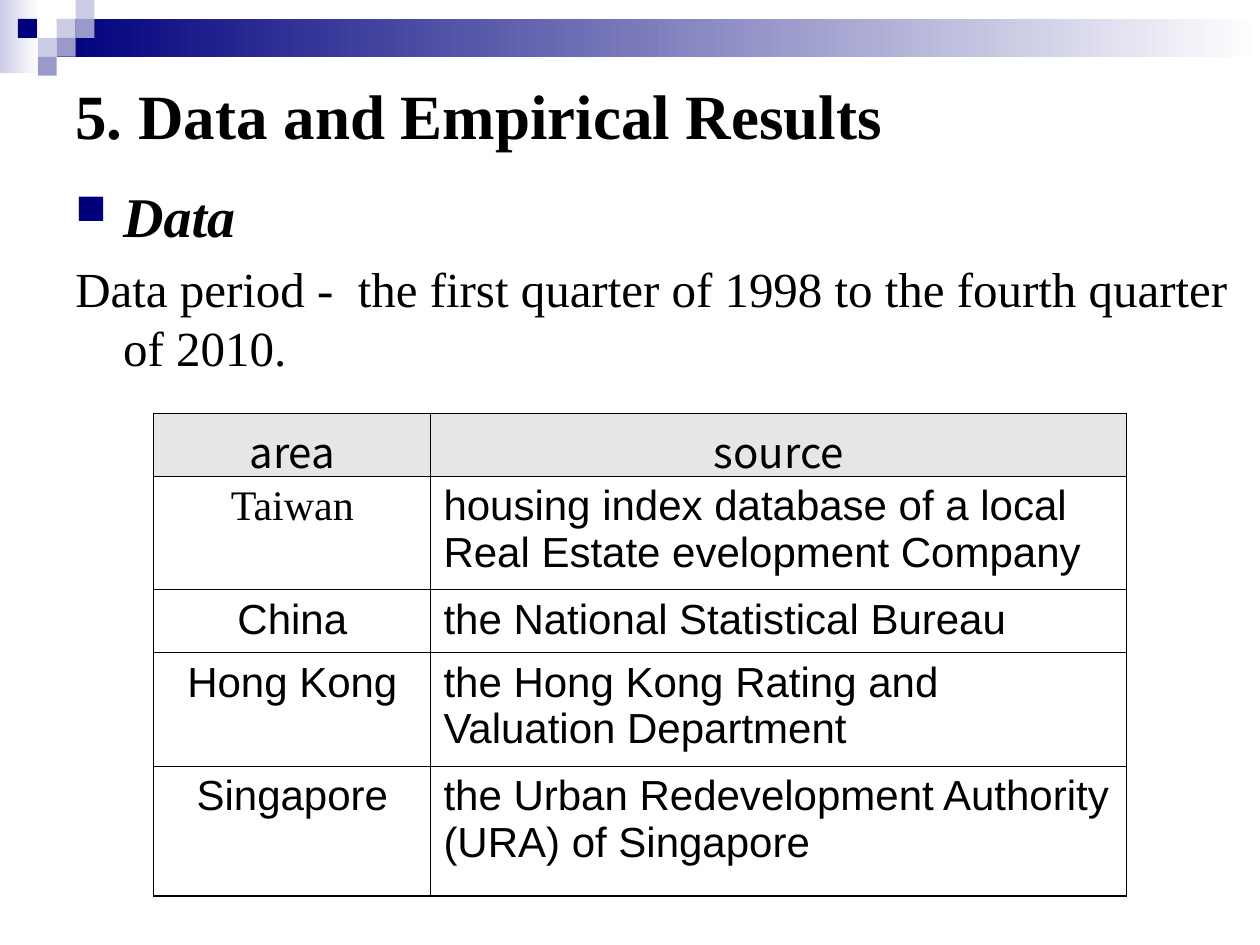
from lxml import etree
from pptx import Presentation
from pptx.dml.color import RGBColor
from pptx.enum.shapes import MSO_SHAPE
from pptx.enum.text import MSO_ANCHOR, PP_ALIGN
from pptx.oxml.ns import qn
from pptx.util import Inches, Pt

RECT = MSO_SHAPE.RECTANGLE
MIDDLE = MSO_ANCHOR.MIDDLE
LEFT, CENTER = PP_ALIGN.LEFT, PP_ALIGN.CENTER

BLACK = RGBColor(0, 0, 0)
WHITE = RGBColor(0xFF, 0xFF, 0xFF)
NAVY = RGBColor(0, 0, 0x7D)
LILAC = RGBColor(0xCC, 0xCC, 0xE6)
VIOLET = RGBColor(0x99, 0x99, 0xCC)
GREY = RGBColor(0xE6, 0xE6, 0xE6)

SERIF, SANS, CJK = "Times New Roman", "Arial", "Noto Sans CJK SC"
W, H = 10, 7.5
UNIT = 0.15  # side of one header square

# column, row and colour of each header square
SQUARES = [(3, 1, LILAC), (4, 0, LILAC), (4, 1, VIOLET), (2, 2, LILAC),
           (0.95, 1, NAVY), (3, 2, VIOLET), (2, 3, VIOLET)]

COLUMNS = [2.2, 5.52]
ROW_HEIGHTS = [0.48, 0.86, 0.48, 0.86, 1.03]
SOURCES = [
    ("area", "source"),
    ("Taiwan", "housing index database of a local Real Estate evelopment Company"),
    ("China", "the National Statistical Bureau"),
    ("Hong Kong", "the Hong Kong Rating and Valuation Department"),
    ("Singapore", "the Urban Redevelopment Authority (URA) of Singapore"),
]


def add_run(p, text, **fmt):
    r = p.add_run()
    r.text = text
    r.font.color.rgb = BLACK
    for name, value in fmt.items():
        setattr(r.font, name, value)


def add_rect(s, box, color, fade=False):
    """Draw a borderless rectangle, fading to white on the right if asked."""
    sp = s.shapes.add_shape(RECT, *map(Inches, box))
    sp.shadow.inherit = False
    sp.line.fill.background()
    if fade:
        sp.fill.gradient()
        sp.fill.gradient_angle = 0
        for stop, stop_color, pos in zip(sp.fill.gradient_stops, (color, WHITE), (0, 1)):
            stop.color.rgb = stop_color
            stop.position = pos
    else:
        sp.fill.solid()
        sp.fill.fore_color.rgb = color


def add_header(s, left, top, width):
    add_rect(s, (left, top, 0.31, 0.58), LILAC, fade=True)
    add_rect(s, (left + 3 * UNIT, top + UNIT, width - 3 * UNIT, 2 * UNIT), NAVY, fade=True)
    for col, row, color in SQUARES:
        add_rect(s, (left + col * UNIT, top + row * UNIT, UNIT, UNIT), color)


def add_text_frame(s, box):
    tf = s.shapes.add_textbox(*map(Inches, box)).text_frame
    tf.word_wrap = True
    return tf


def add_title(s, box):
    tf = add_text_frame(s, box)
    tf.vertical_anchor = MIDDLE
    add_run(tf.paragraphs[0], "5. Data and Empirical Results",
            name=SERIF, size=Pt(36), bold=True)


def set_hanging(p, size):
    """Give the paragraph a hanging indent and a gap of 20% of its size."""
    p.space_before = Pt(0.2 * size)
    pPr = p._p.get_or_add_pPr()
    pPr.set("marL", str(Inches(0.38)))
    pPr.set("indent", str(Inches(-0.38)))
    return pPr


def add_body(s, box):
    tf = add_text_frame(s, box)
    p = tf.paragraphs[0]
    pPr = set_hanging(p, 32)
    color = etree.SubElement(pPr, qn("a:buClr"))
    etree.SubElement(color, qn("a:srgbClr"), val=str(NAVY))
    etree.SubElement(pPr, qn("a:buSzPct"), val="75000")
    etree.SubElement(pPr, qn("a:buChar"), char="■")
    add_run(p, "Data", name=SERIF, size=Pt(32), bold=True, italic=True)

    p = tf.add_paragraph()
    etree.SubElement(set_hanging(p, 28), qn("a:buNone"))
    add_run(p, "Data period -  the first quarter of 1998 to the fourth quarter of 2010.",
            name=SERIF, size=Pt(28))


def set_borders(cell, widths):
    tcPr = cell._tc.get_or_add_tcPr()
    for i, (side, width) in enumerate(widths.items()):
        ln = etree.Element(qn(f"a:ln{side}"), w=str(Pt(width)))
        fill = etree.SubElement(ln, qn("a:solidFill"))
        etree.SubElement(fill, qn("a:srgbClr"), val=str(BLACK))
        tcPr.insert(i, ln)


def add_source_table(s, left, top):
    n = len(SOURCES)
    box = (left, top, sum(COLUMNS), sum(ROW_HEIGHTS))
    table = s.shapes.add_table(n, len(COLUMNS), *map(Inches, box)).table
    for column, width in zip(table.columns, COLUMNS):
        column.width = Inches(width)
    for i, (row, height, texts) in enumerate(zip(table.rows, ROW_HEIGHTS, SOURCES)):
        row.height = Inches(height)
        widths = {"L": 0.75, "R": 0.75, "T": 1 if i < 2 else 0.75,
                  "B": 1 if i in (0, n - 1) else 0.75}
        for j, (cell, text) in enumerate(zip(row.cells, texts)):
            font = CJK if i == 0 else SERIF if text == "Taiwan" else SANS
            p = cell.text_frame.paragraphs[0]
            p.alignment = CENTER if i == 0 or j == 0 else LEFT
            add_run(p, text, name=font, size=Pt(24), bold=False)
            cell.fill.solid()
            cell.fill.fore_color.rgb = GREY if i == 0 else WHITE
            set_borders(cell, widths)


def main():
    prs = Presentation()
    prs.slide_width, prs.slide_height = Inches(W), Inches(H)
    s = prs.slides.add_slide(prs.slide_layouts[6])
    add_header(s, 0, 0, W)
    add_title(s, (0.5, 0.5, 9.3, 0.81))
    add_body(s, (0.5, 1.39, 9.5, 5.03))
    add_source_table(s, 1.22, 3.28)
    prs.save("out.pptx")


if __name__ == "__main__":
    main()
